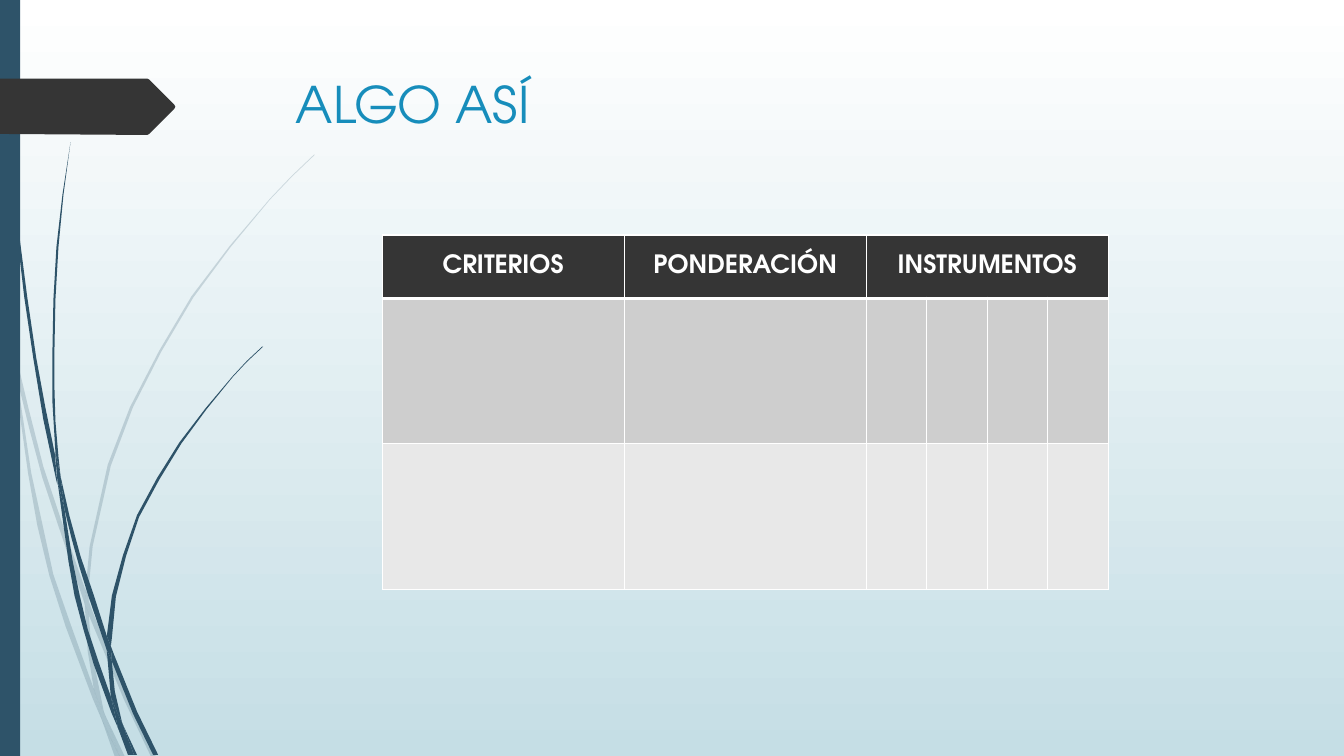
from lxml.etree import SubElement
from pptx import Presentation
from pptx.dml.color import RGBColor
from pptx.enum.shapes import MSO_SHAPE
from pptx.enum.text import MSO_ANCHOR, PP_ALIGN
from pptx.oxml.ns import qn
from pptx.util import Cm, Pt

FONT = "TeX Gyre Adventor"
NAVY, CHARCOAL, BLUE, WHITE = "2E5369", "353535", "178DBB", "FFFFFF"
WIDTH, HEIGHT = 33.87, 19.05
OUTLINE_UNIT = Cm(0.0254)

# Outlines are measured in OUTLINE_UNIT from the corner of their region.
PALE_BLADES = [
    [(11, 350), (9, 322), (0, 282), (0, 299), (10, 344)],
    [(58, 522), (84, 599), (85, 586), (62, 520), (43, 463), (28, 404),
     (14, 345), (17, 376), (29, 425), (42, 474)],
    [(92, 607), (88, 596), (88, 610), (123, 694), (150, 751), (155, 751),
     (127, 692)],
    [(119, 751), (124, 751), (105, 711)],
    [(93, 683), (70, 619), (53, 570), (31, 469), (17, 376), (11, 350),
     (28, 470), (37, 521), (49, 571), (65, 621), (92, 693), (101, 714),
     (99, 707)],
    [(84, 599), (87, 646), (93, 683), (96, 692), (105, 711), (103, 706),
     (91, 646), (88, 610), (88, 608)],
    [(88, 584), (92, 542), (110, 462), (132, 404), (160, 349), (192, 295),
     (229, 245), (268, 198), (290, 175), (312, 154), (312, 153), (289, 175),
     (268, 197), (228, 244), (190, 294), (158, 348), (129, 404), (107, 461),
     (89, 542), (85, 584), (85, 586), (88, 596)],
    [(101, 714), (114, 751), (119, 751)],
    [(88, 608), (88, 610), (88, 596), (85, 586), (84, 599)],
    [(96, 692), (93, 683), (99, 707), (101, 714), (119, 751), (105, 711)],
]
DARK_BLADES = [
    [(7, 110), (17, 233), (24, 294), (33, 355), (43, 416), (56, 477),
     (57, 481), (55, 457), (55, 453), (45, 404), (36, 355), (27, 294),
     (19, 232), (8, 109), (5, 48), (4, 0), (3, 0), (4, 48)],
    [(88, 592), (106, 645), (106, 633), (106, 631), (93, 590), (80, 552),
     (69, 512), (60, 472), (64, 505), (71, 534), (79, 563)],
    [(113, 649), (110, 641), (111, 656), (132, 708), (152, 749), (157, 749),
     (136, 706)],
    [(110, 691), (98, 657), (87, 624), (79, 590), (72, 556), (64, 505),
     (57, 477), (68, 557), (74, 591), (83, 625), (93, 659), (111, 708),
     (117, 722), (116, 717)],
    [(60, 472), (58, 453), (55, 418), (54, 384), (54, 349), (55, 297),
     (58, 245), (63, 193), (70, 141), (62, 193), (56, 245), (53, 297),
     (52, 349), (52, 399), (55, 449)],
    [(133, 749), (136, 749), (122, 719)],
    [(57, 477), (64, 505), (60, 472), (55, 449), (55, 453)],
    [(111, 633), (115, 592), (125, 552), (138, 513), (158, 476), (180, 440),
     (205, 406), (231, 374), (245, 359), (261, 344), (260, 344), (245, 358),
     (231, 373), (204, 405), (178, 439), (156, 474), (136, 511), (122, 551),
     (111, 591), (106, 631), (110, 641)],
    [(117, 722), (127, 749), (131, 749)],
    [(106, 645), (110, 691), (116, 706), (122, 719), (121, 716), (114, 686),
     (111, 656), (109, 651)],
    [(106, 645), (109, 651), (111, 656), (110, 641), (106, 631), (106, 633)],
    [(116, 706), (110, 691), (116, 717), (117, 722), (130, 749), (133, 749),
     (122, 719)],
]
PAGE_TAG = [(173, 30), (148, 55), (146, 56), (0, 55), (0, 0), (146, 0),
            (148, 1), (173, 26), (174, 28)]


def color(hex_code):
    return RGBColor.from_string(hex_code)


def paint(shape, hex_code, opacity=100):
    shape.shadow.inherit = False
    shape.line.fill.background()
    shape.fill.solid()
    shape.fill.fore_color.rgb = color(hex_code)
    if opacity < 100:
        rgb = shape.fill._xPr.find(".//" + qn("a:srgbClr"))
        SubElement(rgb, qn("a:alpha"), val=str(opacity * 1000))


def write(frame, text, size, hex_code, bold=False, align=PP_ALIGN.LEFT,
          anchor=MSO_ANCHOR.TOP):
    frame.word_wrap = True
    frame.vertical_anchor = anchor
    paragraph = frame.paragraphs[0]
    paragraph.alignment = align
    run = paragraph.add_run()
    run.text = text
    run.font.name = FONT
    run.font.size = Pt(size)
    run.font.bold = bold
    run.font.color.rgb = color(hex_code)


def add_outline(slide, left, top, points, hex_code, opacity=100):
    builder = slide.shapes.build_freeform(*points[0], scale=OUTLINE_UNIT)
    builder.add_line_segments(points[1:], close=True)
    paint(builder.convert_to_shape(Cm(left), Cm(top)), hex_code, opacity)


def add_background(slide):
    fill = slide.background.fill
    fill.gradient()
    fill.gradient_angle = 270
    for stop, position, hex_code in zip(fill.gradient_stops, (0, 1),
                                        (WHITE, "C5DEE5")):
        stop.position = position
        stop.color.rgb = color(hex_code)


def add_side_decoration(slide, left, top, height):
    """Grass blades, the edge bar and the page tag."""
    for blades, opacity in ((PALE_BLADES, 20), (DARK_BLADES, 100)):
        for blade in blades:
            add_outline(slide, left, top, blade, NAVY, opacity)
    edge_bar = slide.shapes.add_shape(MSO_SHAPE.RECTANGLE, Cm(left), Cm(top),
                                      Cm(0.51), Cm(height))
    paint(edge_bar, NAVY)
    add_outline(slide, left, top + 1.98, PAGE_TAG, CHARCOAL)


def add_title(slide, left, top, width, height):
    title = slide.shapes.add_textbox(Cm(left), Cm(top), Cm(width), Cm(height))
    write(title.text_frame, "ALGO ASÍ", 36, BLUE)


def set_borders(cell, **widths):
    """Draw white borders; widths in points by side: L, R, T, B."""
    properties = cell._tc.get_or_add_tcPr()
    for side in "LRTB":
        border = SubElement(properties, qn(f"a:ln{side}"),
                            w=str(Pt(widths.get(side, 1))))
        fill = SubElement(border, qn("a:solidFill"))
        SubElement(fill, qn("a:srgbClr"), val=WHITE)


def add_criteria_table(slide, left, top, width, height):
    row_fills = (CHARCOAL, "CECECE", "E8E8E8")
    header_height = 1.6
    body_height = (height - header_height) / 2
    table = slide.shapes.add_table(3, 6, Cm(left), Cm(top), Cm(width),
                                   Cm(height)).table
    for column, share in zip(table.columns, [1 / 3] * 2 + [1 / 12] * 4):
        column.width = Cm(width * share)
    for index, (row, row_fill) in enumerate(zip(table.rows, row_fills)):
        row.height = Cm(body_height if index else header_height)
        for cell in row.cells:
            set_borders(cell, T=3 if index == 1 else 1, B=1 if index else 3)
            cell.fill.solid()
            cell.fill.fore_color.rgb = color(row_fill)
    table.cell(0, 2).merge(table.cell(0, 5))
    for index, heading in enumerate(("CRITERIOS", "PONDERACIÓN",
                                     "INSTRUMENTOS")):
        cell = table.cell(0, index)
        write(cell.text_frame, heading, 18, WHITE, bold=True,
              align=PP_ALIGN.CENTER)
        cell.vertical_anchor = MSO_ANCHOR.MIDDLE


def main():
    presentation = Presentation()
    presentation.slide_width = Cm(WIDTH)
    presentation.slide_height = Cm(HEIGHT)
    slide = presentation.slides.add_slide(presentation.slide_layouts[6])
    add_background(slide)
    add_side_decoration(slide, 0, 0, HEIGHT)
    add_title(slide, 7.21, 1.73, 24.77, 3.56)
    add_criteria_table(slide, 9.63, 5.92, 18.3, 8.93)
    presentation.save("out.pptx")


if __name__ == "__main__":
    main()
